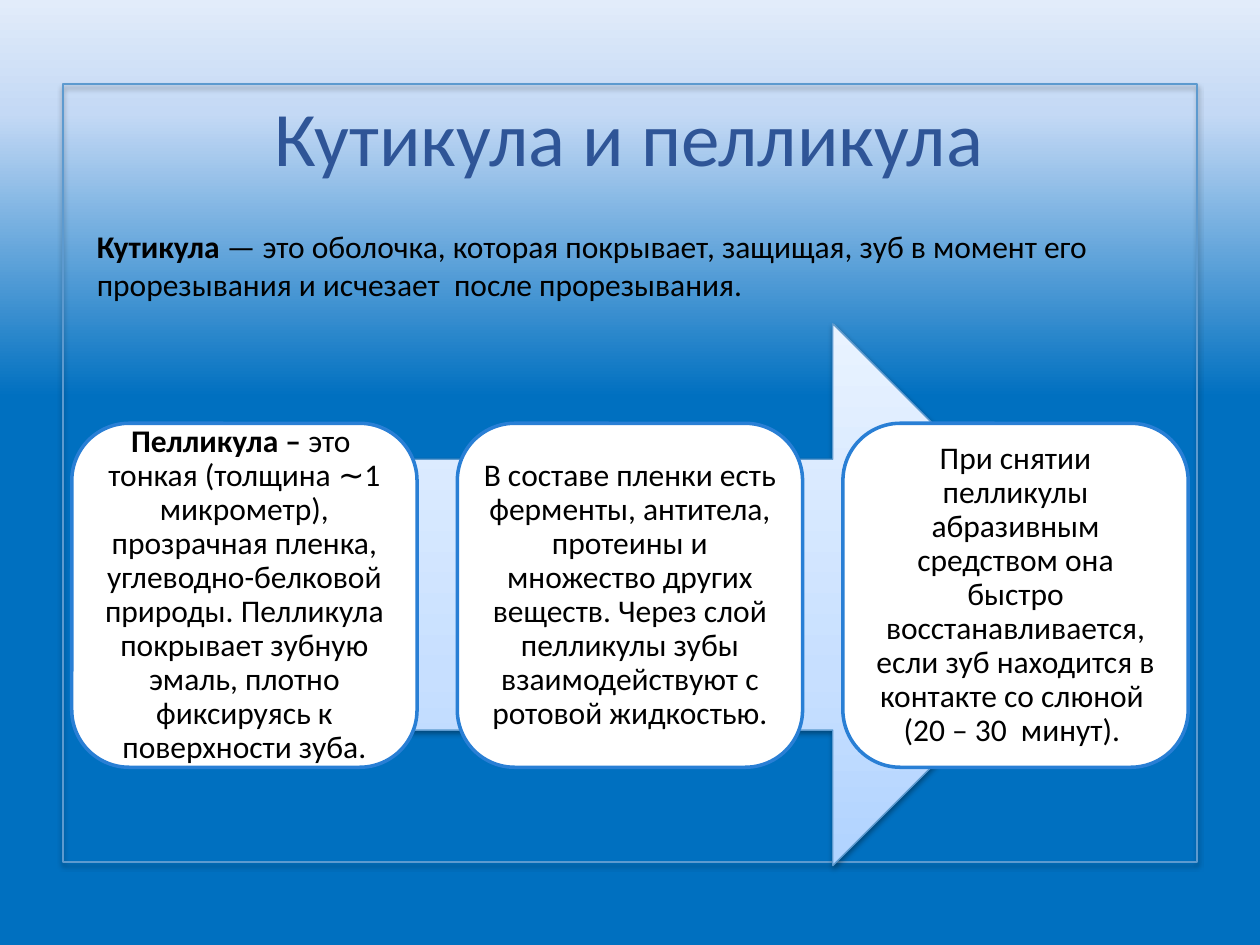
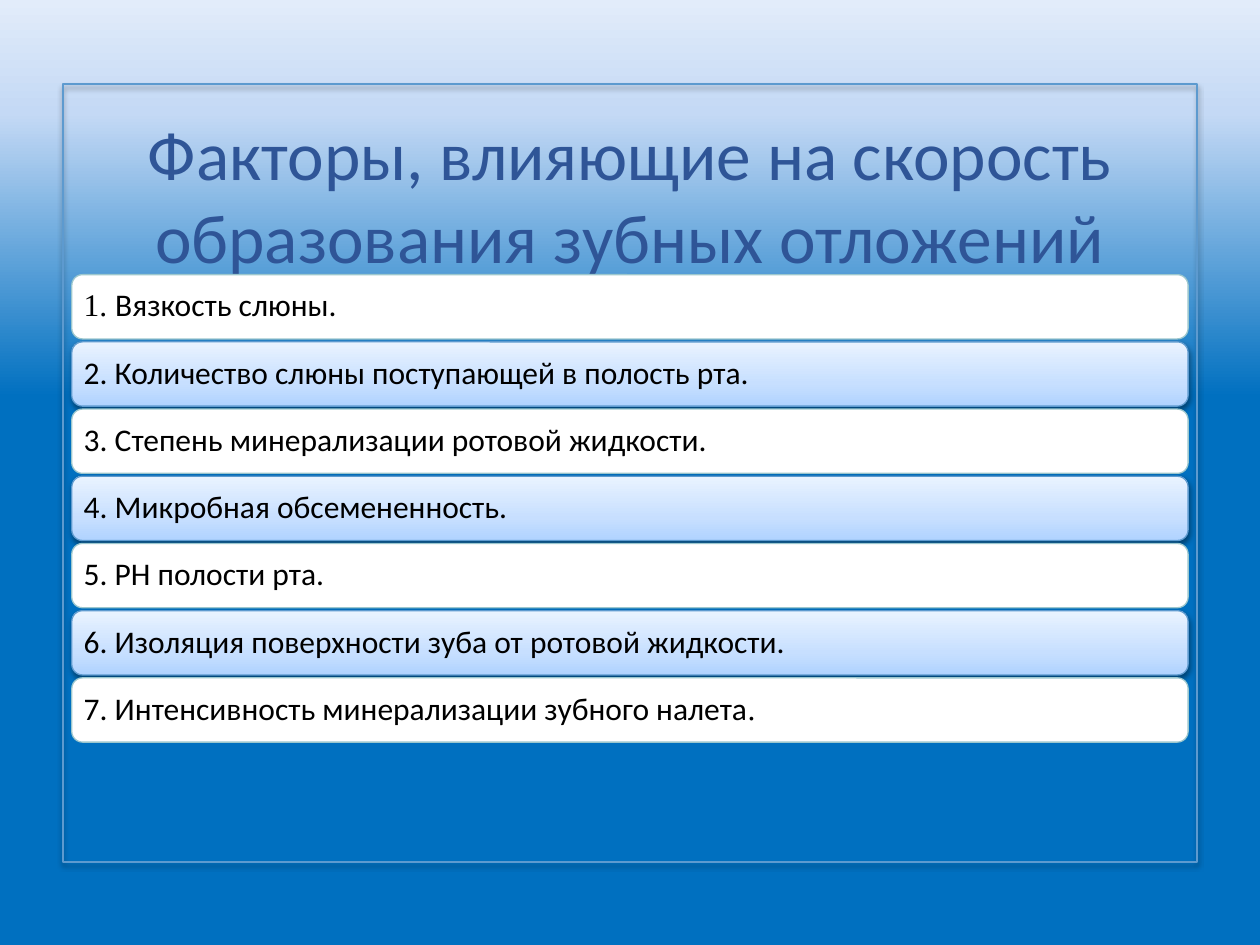
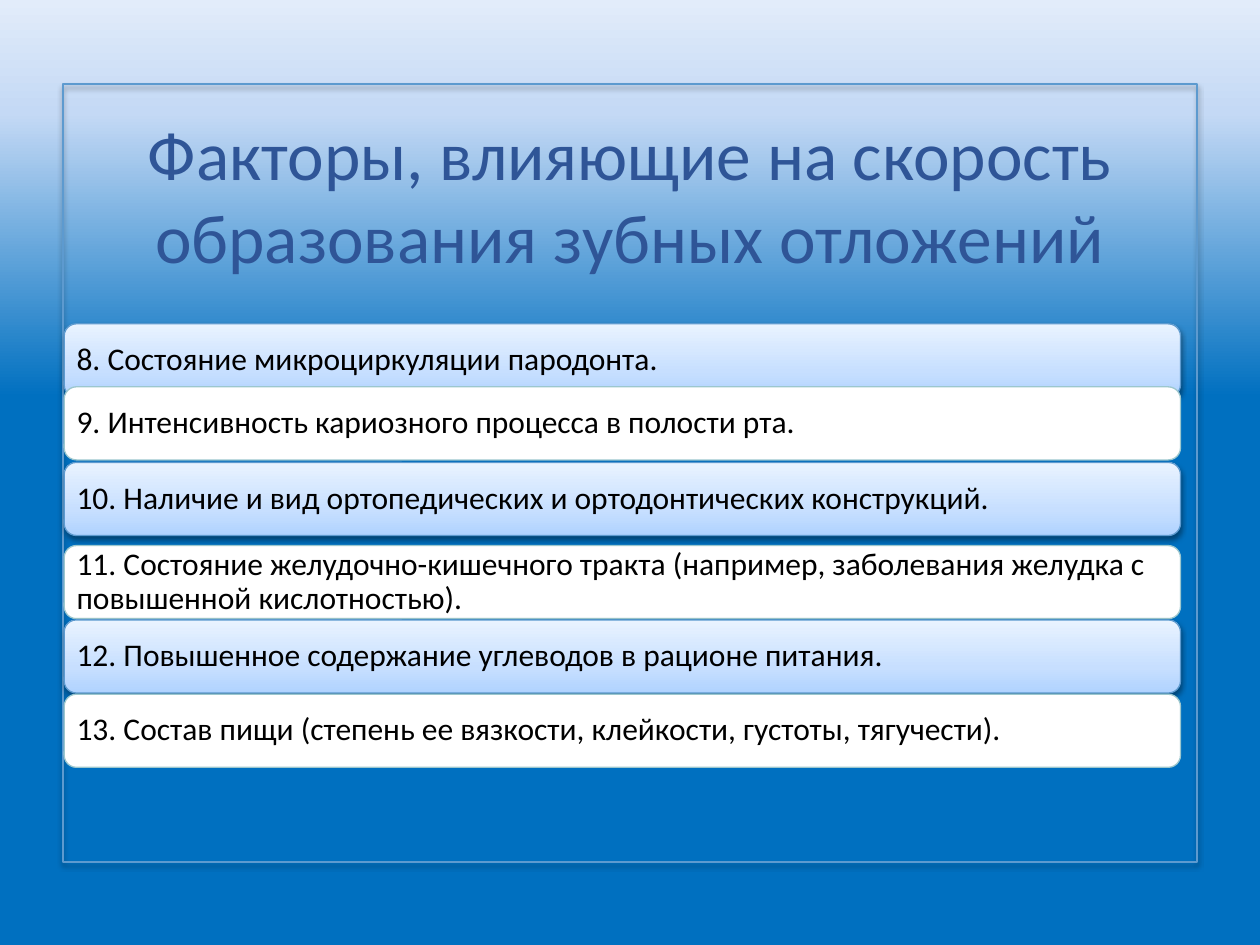
from copy import deepcopy

from lxml import etree
from pptx import Presentation
from pptx.dml.color import RGBColor
from pptx.enum.shapes import MSO_SHAPE
from pptx.enum.text import MSO_ANCHOR, PP_ALIGN
from pptx.oxml.ns import qn
from pptx.util import Inches, Pt

RECT, ROUND, ARROW = MSO_SHAPE.RECTANGLE, MSO_SHAPE.ROUNDED_RECTANGLE, MSO_SHAPE.RIGHT_ARROW
TOP, MIDDLE = MSO_ANCHOR.TOP, MSO_ANCHOR.MIDDLE
LEFT, CENTER = PP_ALIGN.LEFT, PP_ALIGN.CENTER

COLORS = {
    "title": "2F5597", "text": "000000", "white": "FFFFFF",
    "edge": "5D9ACF", "card_edge": "297FD5", "row_edge": "9CC7CE",
}
BACKGROUND = [(0.58, "0070C0"), (0.88, "C4D9F5"), (1, "E2ECFA")]
PALE_BLUE = [(0, "B0D3FF"), (0.35, "C7DFFF"), (1, "E9F3FF")]

# fill, line colour, line width, shadow (opacity in percent, distance in points)
BOX_STYLES = {
    "frame": (None, "edge", 1.25, (35, 1.8)),
    "shaded": (PALE_BLUE, "edge", 0.75, (38, 1.6)),
    "plain": ("white", "row_edge", 0.75, None),
    "card": ("white", "card_edge", 2, None),
}
# size, colour, alignment, anchor, line spacing, inset
TEXT_STYLES = {
    "title": (44, "title", CENTER, MIDDLE, 1.0, None),
    "long_title": (39.6, "title", CENTER, MIDDLE, 1.0, None),
    "body": (18, "text", LEFT, TOP, 1.0, None),
    "card": (18, "text", CENTER, MIDDLE, 0.9, 0.07),
    "row": (18, "text", LEFT, MIDDLE, 0.9, 0.07),
}


def paint_gradient(fill, element, stops):
    """Give fill, held in element, a bottom-to-top gradient of three stops."""
    fill.gradient()
    fill.gradient_angle = 90
    stop_list = element.find(".//" + qn("a:gsLst"))
    stop_list.append(deepcopy(stop_list[-1]))
    for stop, (position, color) in zip(fill.gradient_stops, stops):
        stop.position = position
        stop.color.rgb = RGBColor.from_string(color)


def add_box(s, at, text_style=None, paragraphs=(), kind=None, box_style=None):
    """Add a preset shape, or a text box if kind is None; a paragraph is a list of runs."""
    at = [Inches(v) for v in at]
    if kind is None:
        sp = s.shapes.add_textbox(*at)
    else:
        sp = s.shapes.add_shape(kind, *at)
        fill, line, width, shadow = BOX_STYLES[box_style]
        if fill is None:
            sp.fill.background()
        elif fill == PALE_BLUE:
            paint_gradient(sp.fill, sp.element.spPr, fill)
        else:
            sp.fill.solid()
            sp.fill.fore_color.rgb = RGBColor.from_string(COLORS[fill])
        sp.line.color.rgb = RGBColor.from_string(COLORS[line])
        sp.line.width = Pt(width)
        sp.shadow.inherit = False
        if shadow:
            opacity, distance = shadow
            effects = sp.element.spPr.find(qn("a:effectLst"))
            outer = etree.SubElement(effects, qn("a:outerShdw"), blurRad=str(Pt(3.1)),
                                     dist=str(Pt(distance)), dir="5400000", rotWithShape="0")
            color = etree.SubElement(outer, qn("a:srgbClr"), val="000000")
            etree.SubElement(color, qn("a:alpha"), val=str(opacity * 1000))
    if not paragraphs:
        return sp

    size, color, align, anchor, spacing, inset = TEXT_STYLES[text_style]
    tf = sp.text_frame
    tf.word_wrap = True
    tf.vertical_anchor = anchor
    if inset:
        tf.margin_left = tf.margin_right = tf.margin_top = tf.margin_bottom = Inches(inset)
    for i, runs in enumerate(paragraphs):
        p = tf.paragraphs[0] if i == 0 else tf.add_paragraph()
        p.alignment = align
        p.line_spacing = spacing
        for text in runs:
            r = p.add_run()
            r.text = text
            r.font.name = "Calibri"
            r.font.size = Pt(size)
            r.font.color.rgb = RGBColor.from_string(COLORS[color])
    return sp


prs = Presentation()
prs.slide_width, prs.slide_height = Inches(10), Inches(7.5)
master = prs.slide_master
paint_gradient(master.background.fill, master.element, BACKGROUND)

# Frame and title of every slide
FACTORS_TITLE = "Факторы, влияющие на скорость образования зубных отложений"
titles = [
    ("Кутикула и пелликула", "title", (1.06, 0.36, 7.87, 1.43)),
    (FACTORS_TITLE, "long_title", (0.57, 1.16, 8.86, 0.76)),
    (FACTORS_TITLE, "long_title", (0.67, 1.07, 8.66, 0.94)),
]
slides = []
for title, style, at in titles:
    s = prs.slides.add_slide(prs.slide_layouts[6])
    add_box(s, (0.5, 0.67, 9, 6.17), kind=RECT, box_style="frame")
    add_box(s, at, style, [[title]])
    slides.append(s)
pellicle, factors, more_factors = slides

# Slide 1: three cards on an arrow, under a definition
add_box(pellicle, (1.23, 2.57, 7.53, 4.3), kind=ARROW, box_style="shaded")
cards = [
    [["Пелликула –", " это  тонкая (толщина ∼1 микрометр), прозрачная пленка, "
      "углеводно-белковой природы. Пелликула покрывает зубную эмаль, плотно "
      "фиксируясь к поверхности зуба."]],
    [["В составе пленки есть ферменты, антитела, протеины и множество других веществ. "
      "Через слой пелликулы зубы взаимодействуют с ротовой жидкостью."]],
    [["При снятии пелликулы абразивным средством она быстро восстанавливается, "
      "если зуб находится в контакте со слюной "],
     ["(20 – 30  минут). "]],
]
card_shapes = [
    add_box(pellicle, (0.57 + 3.06 * i, 3.36, 2.74, 2.73), "card", card, ROUND, "card")
    for i, card in enumerate(cards)
]
definition = add_box(pellicle, (0.67, 1.75, 8.86, 0.71), "body", [
    ["Кутикула", " — это оболочка, которая покрывает, защищая, зуб в момент его "
     "прорезывания и исчезает  после прорезывания."]])
for sp in (card_shapes[0], definition):
    sp.text_frame.paragraphs[0].runs[0].font.bold = True

# Slides 2 and 3: numbered factors, the even ones shaded
first_rows = [
    ["1. ", "Вязкость слюны."],
    ["2. Количество слюны поступающей в полость рта."],
    ["3. Степень минерализации ротовой жидкости."],
    ["4. Микробная обсемененность."],
    ["5. РН полости рта."],
    ["6. Изоляция поверхности зуба от ротовой жидкости."],
    ["7. Интенсивность минерализации зубного налета", "."],
]
last_rows = [
    ["8. Состояние микроциркуляции пародонта."],
    ["9. Интенсивность кариозного процесса в полости рта."],
    ["10. Наличие и вид ортопедических и ортодонтических конструкций."],
    ["11. Состояние желудочно-кишечного тракта (например, заболевания желудка "
     "с повышенной кислотностью)."],
    ["12. Повышенное содержание углеводов в рационе питания."],
    ["13. Состав пищи (степень ее вязкости, клейкости, густоты, тягучести)."],
]
first_tops = [2.18 + 3.2 / 6 * i for i in range(len(first_rows))]
last_tops = [2.57, 3.07, 3.67, 4.33, 4.92, 5.51]
row_shapes = []
for s, left, height, tops, rows in [
    (factors, 0.57, 0.51, first_tops, first_rows),
    (more_factors, 0.51, 0.58, last_tops, last_rows),
]:
    for top, runs in zip(tops, rows):
        number = len(row_shapes) + 1
        style = "plain" if number % 2 else "shaded"
        row_shapes.append(add_box(s, (left, top, 8.86, height), "row", [runs], ROUND, style))
for number, run in [(1, 0), (7, 1)]:
    p = row_shapes[number - 1].text_frame.paragraphs[0]
    p.runs[run].font.name = "Times New Roman"

prs.save("out.pptx")
